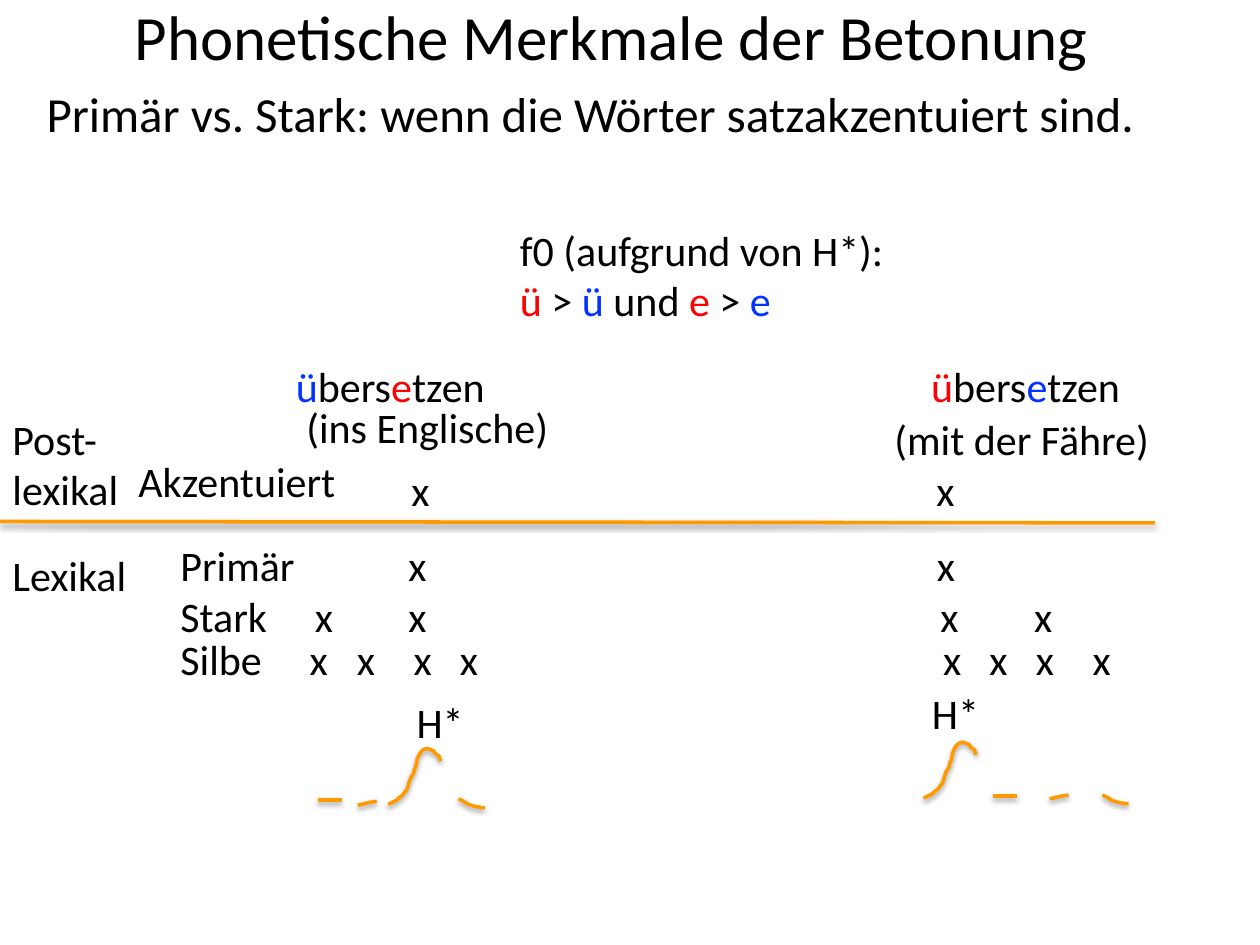
from pptx import Presentation
from pptx.dml.color import RGBColor
from pptx.enum import shapes, text
from pptx.oxml import parse_xml
from pptx.oxml.ns import nsdecls, qn
from pptx.util import Pt

BLACK, RED, BLUE, ORANGE = "000000", "FF0000", "0432FF", "FF9900"

HEADINGS = [
    ("Phonetische Merkmale der Betonung", 70, -5, 564, 51, 36),
    ("Primär vs. Stark: wenn die Wörter satzakzentuiert sind.", 19.5, 44, 680, 41, 28),
]
LABELS = [
    ("Lexikal", 0, 310.5, 84),
    ("Post-lexikal", 0, 232.5, 90),
    ("(ins Englische)", 168, 226, 162),
    ("(mit der Fähre)", 504, 232.5, 162),
    ("Akzentuiert", 72, 256.5, 132),
    ("x", 228, 262, 36),
    ("x", 528, 262, 36),
    ("H*", 231, 394.5, 42),
    ("H*", 525.5, 389.5, 42),
]
GRID_LEFT, INSET = 96, 7.2
GRID = [
    ("Silbe", 358.5, [177, 204, 236.5, 263, 539, 565.5, 592, 624.5]),
    ("Stark", 334, [180, 233.5, 537.5, 591]),
    ("Primär", 304.5, [233.5, 535.5]),
]
WORDS = [("ü", BLUE), ("bers", BLACK), ("e", RED), ("tzen\t", BLACK),
         ("ü", RED), ("bers", BLACK), ("e", BLUE), ("tzen", BLACK)]
RULE = [("f0 (aufgrund von H*):", BLACK)], [
    ("ü", RED), (" > ", BLACK), ("ü", BLUE), (" und ", BLACK),
    ("e", RED), (" > ", BLACK), ("e", BLUE)]

CONTOURS = {
    "flat": [(0, 0), (13.7, 0)],
    "rise": [(0, 2.2), (6.5, 0.7), (10.8, 0)],
    "peak": [(0, 32), (5, 29.5), (6.5, 28), (8, 27), (11, 23), (12, 19.5),
             (13, 16.5), (14.5, 14.5), (15, 12), (16, 10), (16.5, 6.5),
             (18, 3), (20, 0.7), (22.5, 0), (26, 1.4), (27, 3), (29, 4.3), (30, 7.2)],
    "fall": [(0, 0), (2.9, 1.4), (5, 2.9), (8, 4), (13, 5), (15, 5)],
}
PITCH = [
    ("flat", 181.5, 457.2), ("rise", 204.5, 457.9), ("peak", 221.8, 427.7), ("fall", 262, 456.5),
    ("peak", 527.8, 424.1), ("flat", 567.4, 455), ("rise", 599.8, 454.3), ("fall", 630, 454.3),
]
SHADOW = ('<a:effectLst %s><a:outerShdw blurRad="39370" dist="20320" dir="5400000" rotWithShape="0">'
          '<a:srgbClr val="000000"><a:alpha val="38000"/></a:srgbClr></a:outerShdw></a:effectLst>')


def rgb(value):
    return RGBColor.from_string(value)


def add_text(s, paragraphs, x, y, w, h=36.5, size=24, wrap=True, tabs=()):
    tf = s.shapes.add_textbox(Pt(x), Pt(y), Pt(w), Pt(h)).text_frame
    tf.word_wrap = wrap
    tf.auto_size = text.MSO_AUTO_SIZE.SHAPE_TO_FIT_TEXT
    for i, runs in enumerate(paragraphs):
        p = tf.add_paragraph() if i else tf.paragraphs[0]
        if tabs:
            tab_list = p._p.get_or_add_pPr().makeelement(qn("a:tabLst"), {})
            p._p.get_or_add_pPr().append(tab_list)
            for stop in tabs:
                tab = tab_list.makeelement(qn("a:tab"), {"pos": str(int(Pt(stop))), "algn": "l"})
                tab_list.append(tab)
        for words, color in runs:
            r = p.add_run()
            r.text = words
            r.font.name = "Calibri"
            r.font.size = Pt(size)
            r.font.color.rgb = rgb(color)


def add_line(s, points):
    points = [(Pt(x), Pt(y)) for x, y in points]
    if len(points) == 2:
        sp = s.shapes.add_connector(shapes.MSO_CONNECTOR.STRAIGHT, *points[0], *points[1])
    else:
        outline = s.shapes.build_freeform(*points[0])
        outline.add_line_segments(points[1:], close=False)
        sp = outline.convert_to_shape()
        sp.fill.background()
    sp.line.color.rgb = rgb(ORANGE)
    sp.line.width = Pt(2)
    sp._element.spPr.append(parse_xml(SHADOW % nsdecls("a")))


def main():
    prs = Presentation()
    prs.slide_width, prs.slide_height = Pt(720), Pt(540)
    s = prs.slides.add_slide(prs.slide_layouts[6])

    for words, x, y, w, h, size in HEADINGS:
        add_text(s, [[(words, BLACK)]], x, y, w, h, size)
    add_line(s, [(0, 298), (660, 298.8)])
    for words, x, y, w in LABELS:
        add_text(s, [[(words, BLACK)]], x, y, w)
    add_text(s, [WORDS], 162, 202.5, 498, tabs=[363])
    for level, y, marks in GRID:
        stops = [mark - GRID_LEFT - INSET for mark in marks]
        row = "\t".join([level] + ["x"] * len(marks))
        add_text(s, [[(row, BLACK)]], GRID_LEFT, y, 648, tabs=stops)
    for kind, left, top in PITCH:
        add_line(s, [(left + x, top + y) for x, y in CONTOURS[kind]])
    add_text(s, RULE, 290, 124.5, 224, 65.5, wrap=False)

    prs.save("out.pptx")


if __name__ == "__main__":
    main()
